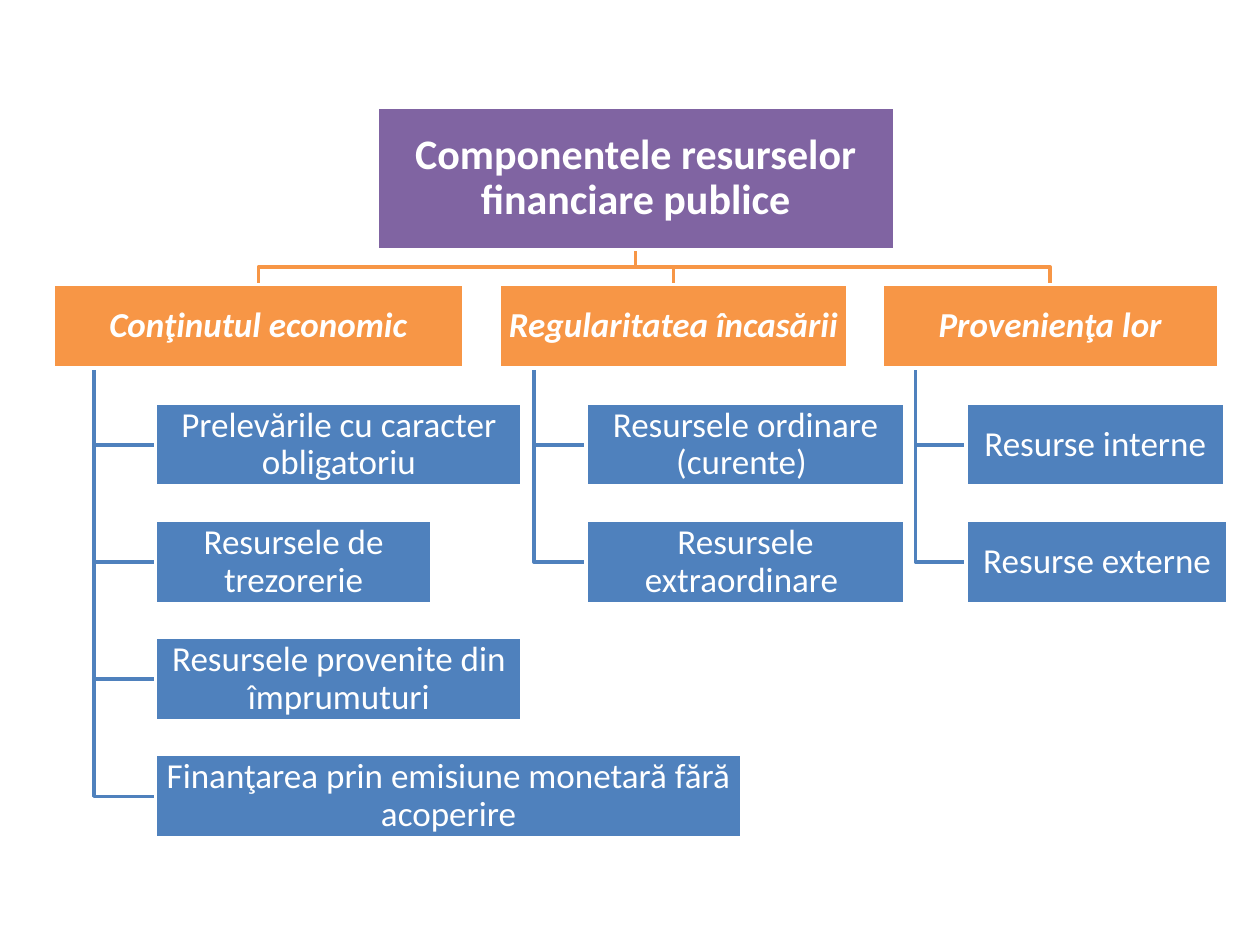
from pptx import Presentation
from pptx.dml.color import RGBColor
from pptx.enum.shapes import MSO_SHAPE
from pptx.enum.text import MSO_ANCHOR, PP_ALIGN
from pptx.util import Inches, Pt

RECT = MSO_SHAPE.RECTANGLE
MIDDLE = MSO_ANCHOR.MIDDLE
CENTER = PP_ALIGN.CENTER

WHITE, PURPLE, ORANGE, BLUE = "FFFFFF", "8064A2", "F79646", "4F81BD"
FONT = "Calibri"
ROOT_BOX = (2.99, 0.85, 4.11, 1.13)
HEAD_TOP, ROW_TOP, ROW_PITCH, ROW_H = 2.26, 3.2, 0.93, 0.66
TRUNK_SHARE, INDENT_SHARE = 0.1, 0.25

BRANCHES = [
    (0.42, 3.26, "Conţinutul economic", [
        ("Prelevările cu caracter obligatoriu", 2.91),
        ("Resursele de trezorerie", 2.19),
        ("Resursele provenite din împrumuturi", 2.91),
        ("Finanţarea prin emisiune monetară fără acoperire", 4.65),
    ]),
    (3.96, 2.77, "Regularitatea încasării", [
        ("Resursele ordinare (curente) ", 2.53),
        ("Resursele extraordinare ", 2.53),
    ]),
    (7, 2.67, "Provenienţa lor", [
        ("Resurse interne", 2.05),
        ("Resurse externe", 2.08),
    ]),
]


def rgb(color):
    return RGBColor.from_string(color)


def add_box(s, box, text, fill, size=20, bold=False, italic=False, inset=0.01):
    sp = s.shapes.add_shape(RECT, *map(Inches, box))
    sp.shadow.inherit = False
    sp.fill.solid()
    sp.fill.fore_color.rgb = rgb(fill)
    sp.line.color.rgb = rgb(WHITE)
    sp.line.width = Pt(2)
    tf = sp.text_frame
    tf.word_wrap = True
    tf.vertical_anchor = MIDDLE
    tf.margin_left = tf.margin_right = Inches(inset)
    tf.margin_top = tf.margin_bottom = Inches(inset)
    tf.text = text
    p = tf.paragraphs[0]
    p.alignment = CENTER
    p.line_spacing = 0.9
    font = p.runs[0].font
    font.name, font.size = FONT, Pt(size)
    font.bold, font.italic = bold, italic
    font.color.rgb = rgb(WHITE)


def add_elbow(s, points, color):
    start, *rest = [(Inches(x), Inches(y)) for x, y in points]
    builder = s.shapes.build_freeform(*start)
    builder.add_line_segments(rest, close=False)
    sp = builder.convert_to_shape()
    sp.shadow.inherit = False
    sp.fill.background()
    sp.line.color.rgb = rgb(color)
    sp.line.width = Pt(2)


def add_root(s, box, targets):
    left, top, width, height = box
    x, bottom = left + width / 2, top + height
    bus = (bottom + HEAD_TOP) / 2
    for target in targets:
        points = [(x, bottom), (x, bus), (target, bus), (target, HEAD_TOP)]
        add_elbow(s, points, ORANGE)
    add_box(s, box, "Componentele resurselor financiare publice", PURPLE,
            size=24, bold=True, inset=0.02)


def add_branch(s, left, width, heading, items):
    trunk = left + TRUNK_SHARE * width
    indent = left + INDENT_SHARE * width
    for i, (text, item_width) in enumerate(items):
        top = ROW_TOP + i * ROW_PITCH
        middle = top + ROW_H / 2
        points = [(trunk, HEAD_TOP + ROW_H), (trunk, middle), (indent, middle)]
        add_elbow(s, points, BLUE)
        add_box(s, (indent, top, item_width, ROW_H), text, BLUE)
    add_box(s, (left, HEAD_TOP, width, ROW_H), heading, ORANGE,
            bold=True, italic=True)


def main():
    prs = Presentation()
    prs.slide_width, prs.slide_height = Inches(10), Inches(7.5)
    s = prs.slides.add_slide(prs.slide_layouts[6])
    add_root(s, ROOT_BOX, [left + width / 2 for left, width, *_ in BRANCHES])
    for branch in BRANCHES:
        add_branch(s, *branch)
    prs.save("out.pptx")


if __name__ == "__main__":
    main()
